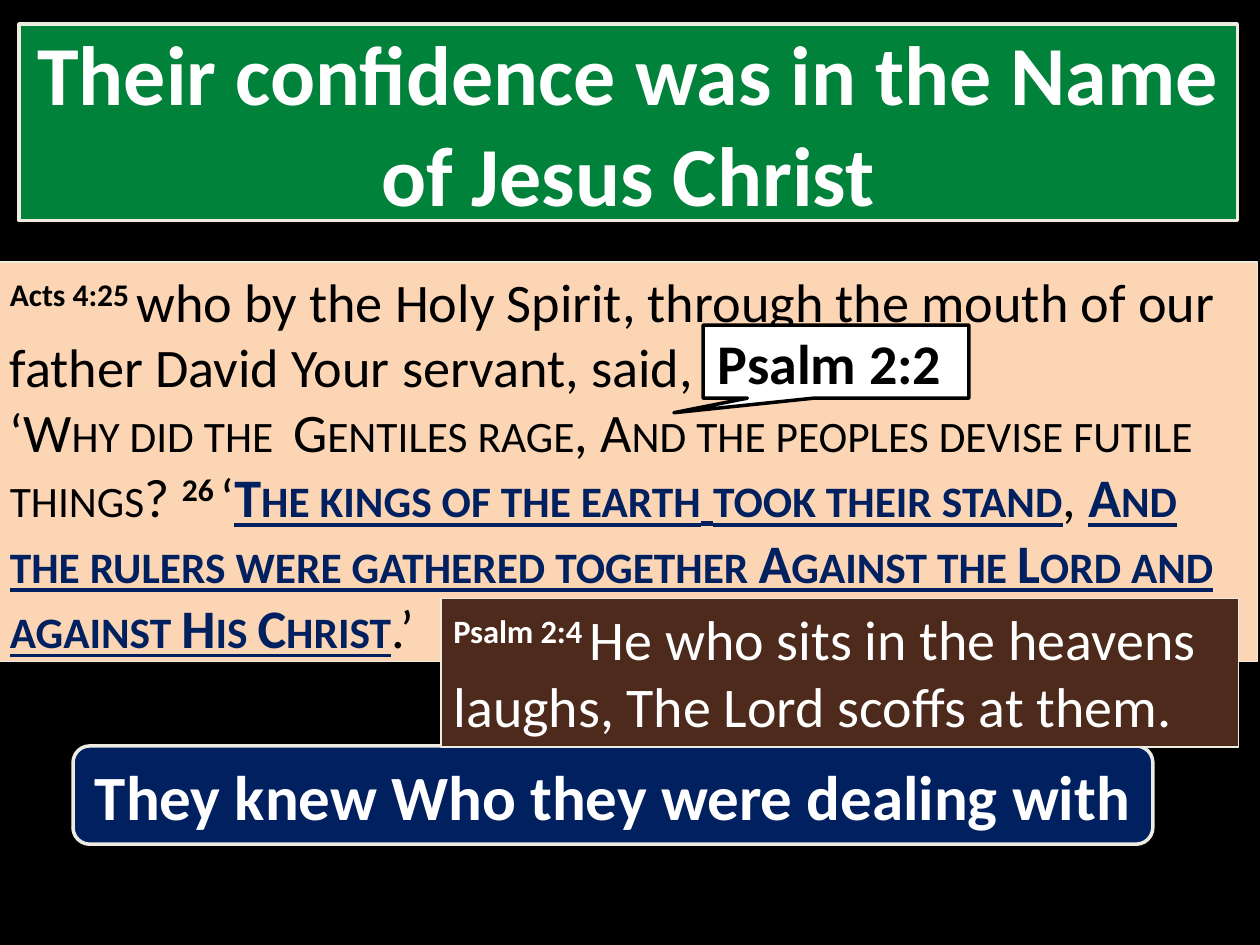
from copy import deepcopy

from pptx import Presentation
from pptx.dml.color import RGBColor
from pptx.enum.shapes import MSO_SHAPE as Shape
from pptx.enum.text import MSO_ANCHOR as Anchor, MSO_AUTO_SIZE as AutoSize, PP_ALIGN as Align
from pptx.util import Inches, Pt

BLACK = RGBColor(0x00, 0x00, 0x00)
WHITE = RGBColor(0xFF, 0xFF, 0xFF)
GREEN = RGBColor(0x00, 0x82, 0x3B)
NAVY = RGBColor(0x00, 0x20, 0x60)
PEACH = RGBColor(0xFC, 0xD5, 0xB5)
BROWN = RGBColor(0x4D, 0x2A, 0x1B)
CREAM = RGBColor(0xEE, 0xEC, 0xE1)

# Run styles: font values, then attributes of the run properties
PLAIN = ({"bold": False}, {})
BOLD = ({"bold": True}, {})
VERSE_NUMBER = ({"bold": True}, {"baseline": "30000"})
SMALL_CAPS = ({"bold": False}, {"cap": "small"})
KEY_GAP = ({"bold": True, "underline": True}, {})
KEY_PHRASE = ({"bold": True, "underline": True}, {"cap": "small"})


def style_box(shape, fill, line, line_width, anchor):
    shape.shadow.inherit = False
    shape.fill.solid()
    shape.fill.fore_color.rgb = fill
    shape.line.color.rgb = line
    shape.line.width = Pt(line_width)
    frame = shape.text_frame
    frame.word_wrap = True
    frame.auto_size = AutoSize.NONE
    frame.vertical_anchor = anchor


def write_text(frame, paragraphs, size, color, align):
    """Fill the frame with paragraphs, each a list of (text, style) runs."""
    for index, runs in enumerate(paragraphs):
        paragraph = frame.paragraphs[0] if index == 0 else frame.add_paragraph()
        paragraph.alignment = align
        for text, (font_values, attributes) in runs:
            run = paragraph.add_run()
            run.text = text
            values = {"name": "Calibri", "size": Pt(size), **font_values}
            for name, value in values.items():
                setattr(run.font, name, value)
            run.font.color.rgb = NAVY if "underline" in font_values else color
            for name, value in attributes.items():
                run.font._element.set(name, value)


presentation = Presentation()
presentation.slide_width = Inches(10)
presentation.slide_height = Inches(7.5)
slide = presentation.slides.add_slide(presentation.slide_layouts[5])
slide.background.fill.solid()
slide.background.fill.fore_color.rgb = BLACK

# Title banner
title = slide.shapes.title
title.left, title.top = Inches(0.15), Inches(0.19)
title.width, title.height = Inches(9.67), Inches(1.56)

# Boxes: geometry, adjustments, place, fill, line, line width, anchor,
# paragraphs, text size, text colour, alignment
boxes = [
    (Shape.ROUNDED_RECTANGULAR_CALLOUT, (-0.22, 0.5, 0.17), (0.58, 5.92, 8.57, 0.78),
     NAVY, CREAM, 2, Anchor.MIDDLE,
     [[("They knew Who they were dealing with", BOLD)]], 36, WHITE, Align.CENTER),
    (Shape.RECTANGLE, (), (-0.02, 2.08, 10, 3.17),
     PEACH, CREAM, 0.75, Anchor.TOP,
     [[("Acts 4:25 ", VERSE_NUMBER),
       ("who by the Holy Spirit, through the mouth of our father David Your servant, said,", PLAIN)],
      [("‘", PLAIN),
       ("Why did the  Gentiles rage", SMALL_CAPS),
       (", ", PLAIN),
       ("And the peoples devise futile things", SMALL_CAPS),
       ("? ", PLAIN),
       ("26 ", VERSE_NUMBER),
       ("‘", PLAIN),
       ("The kings of the earth", KEY_PHRASE),
       (" ", KEY_GAP),
       ("took their stand", KEY_PHRASE),
       (", ", PLAIN),
       ("And the rulers were gathered together Against the Lord and against His Christ", KEY_PHRASE),
       (".’", PLAIN)]], 31, BLACK, Align.LEFT),
    (Shape.RECTANGULAR_CALLOUT, (-0.61, 0.7), (5.58, 2.58, 2.11, 0.58),
     WHITE, BLACK, 2, Anchor.MIDDLE,
     [[("Psalm 2:2 ", BOLD)]], 32, BLACK, Align.CENTER),
    (Shape.RECTANGLE, (), (3.5, 4.75, 6.33, 1.18),
     BROWN, CREAM, 0.75, Anchor.TOP,
     [[("Psalm 2:4 ", VERSE_NUMBER),
       ("He who sits in the heavens  laughs, The Lord scoffs at them.", PLAIN)]],
     32, WHITE, Align.LEFT),
]
shapes = []
for geometry, adjustments, place, fill, line, line_width, anchor, *text in boxes:
    shape = slide.shapes.add_shape(geometry, *map(Inches, place))
    for index, value in enumerate(adjustments):
        shape.adjustments[index] = value
    style_box(shape, fill, line, line_width, anchor)
    write_text(shape.text_frame, *text)
    shapes.append(shape)

# The title takes the rounded outline of the closing banner
outline = shapes[0]._element.spPr.prstGeom
title._element.spPr.append(deepcopy(outline))
title_properties = title._element.spPr
title.fill.solid()
title.fill.fore_color.rgb = GREEN
title.line.color.rgb = CREAM
title.line.width = Pt(2)
title.text_frame.word_wrap = True
title.text_frame.auto_size = AutoSize.NONE
title.text_frame.vertical_anchor = Anchor.MIDDLE
write_text(title.text_frame, [[("Their confidence was in the Name of Jesus Christ", BOLD)]],
           48, WHITE, Align.CENTER)

presentation.save("out.pptx")
